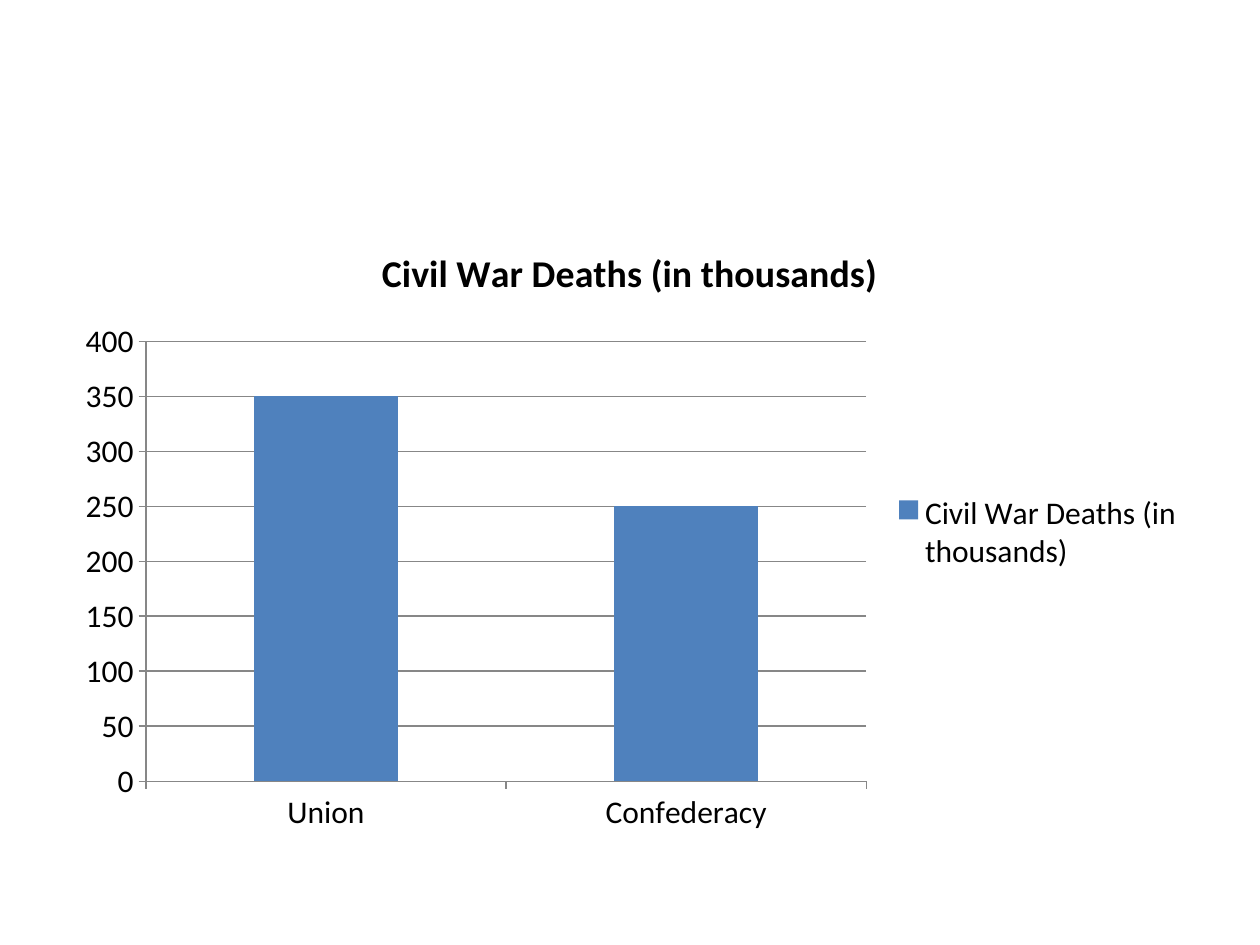
from dataclasses import dataclass

from pptx import Presentation
from pptx import util as u
from pptx.chart.data import CategoryChartData
from pptx.dml.color import RGBColor
from pptx.enum import chart as ch

PX = 9144


@dataclass(frozen=True)
class Theme:
    font: str = "Calibri"
    ink: str = "000000"
    bar: str = "4F81BD"
    rule: str = "878787"
    label_size: float = 18
    title_size: float = 21.6


@dataclass(frozen=True)
class Box:
    left: int
    top: int
    width: int
    height: int

    def emu(self) -> tuple:
        return tuple(u.Emu(n * PX) for n in (self.left, self.top, self.width, self.height))


THEME = Theme()
HEADING = "Civil War Deaths (in thousands)"
DEATHS = {"Union": 350, "Confederacy": 250}
DEATHS_BOX = Box(50, 175, 900, 495)
VALUE_SCALE = {
    "minimum_scale": 0,
    "maximum_scale": 400,
    "major_unit": 50,
    "has_major_gridlines": True,
}


def apply(target: object, formats: dict) -> None:
    for name, value in formats.items():
        setattr(target, name, value)


def style_font(font: object, size: float, bold: bool = False) -> None:
    apply(font, {"name": THEME.font, "size": u.Pt(size), "bold": bold})
    font.color.rgb = RGBColor.from_string(THEME.ink)


def style_line(line: object) -> None:
    line.color.rgb = RGBColor.from_string(THEME.rule)
    line.width = u.Pt(0.75)


def style_axis(axis: object, formats: dict) -> None:
    apply(axis, {
        "major_tick_mark": ch.XL_TICK_MARK.OUTSIDE,
        "minor_tick_mark": ch.XL_TICK_MARK.NONE,
        **formats,
    })
    style_line(axis.format.line)
    if axis.has_major_gridlines:
        style_line(axis.major_gridlines.format.line)


def add_deaths_chart(slide: object, box: Box) -> None:
    data = CategoryChartData()
    data.categories = list(DEATHS)
    data.add_series(HEADING, list(DEATHS.values()))
    deaths = slide.shapes.add_chart(
        ch.XL_CHART_TYPE.COLUMN_CLUSTERED, *box.emu(), data
    ).chart
    style_font(deaths.font, THEME.label_size)

    apply(deaths, {"has_title": True, "has_legend": True})
    heading = deaths.chart_title.text_frame
    heading.text = HEADING
    style_font(heading.paragraphs[0].runs[0].font, THEME.title_size, bold=True)
    apply(deaths.legend, {
        "position": ch.XL_LEGEND_POSITION.RIGHT,
        "include_in_layout": False,
    })

    style_axis(deaths.category_axis, {"has_major_gridlines": False})
    style_axis(deaths.value_axis, VALUE_SCALE)

    columns = deaths.plots[0]
    apply(columns, {"gap_width": 150, "vary_by_categories": False})
    fill = columns.series[0].format.fill
    fill.solid()
    fill.fore_color.rgb = RGBColor.from_string(THEME.bar)


def main() -> None:
    deck = Presentation()
    apply(deck, {"slide_width": u.Emu(1000 * PX), "slide_height": u.Emu(750 * PX)})
    slide = deck.slides.add_slide(deck.slide_layouts[6])
    add_deaths_chart(slide, DEATHS_BOX)
    deck.save("out.pptx")


if __name__ == "__main__":
    main()
